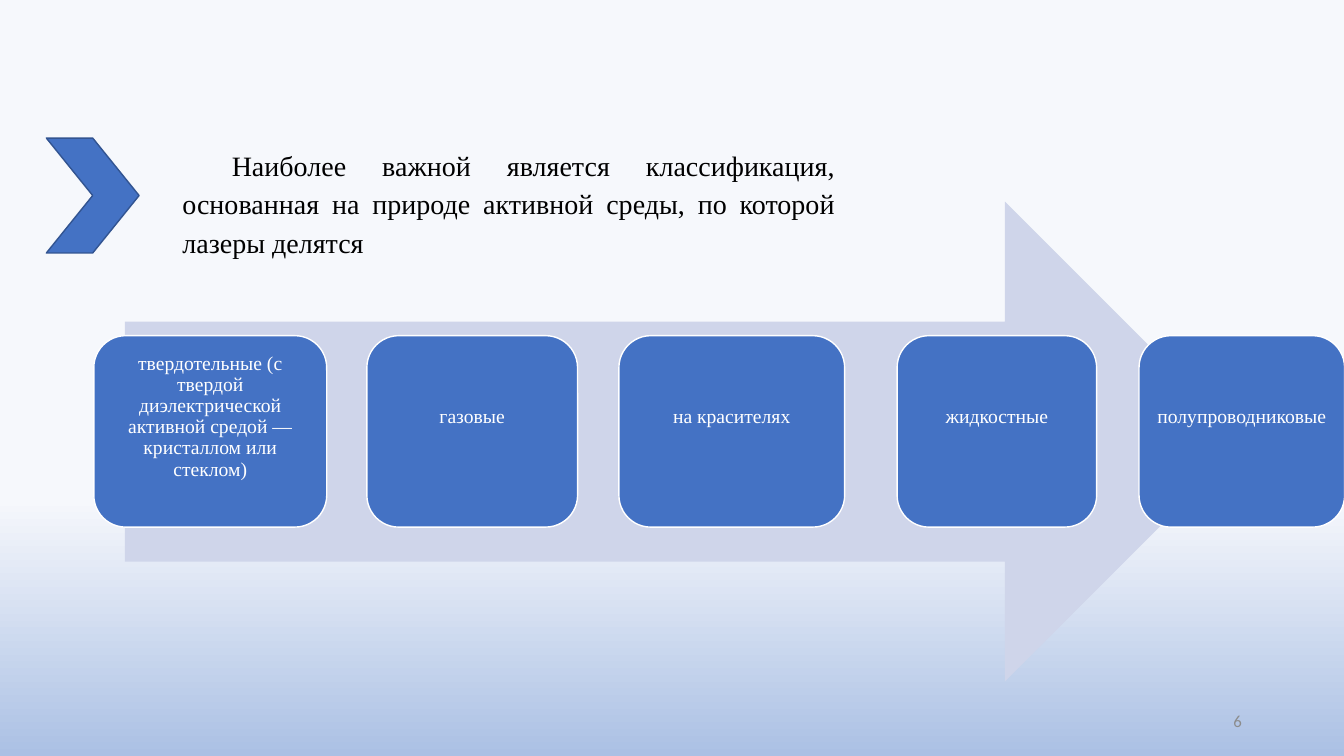
"""Builds a slide that sorts lasers by their active medium along an arrow."""
from pptx import Presentation
from pptx import util as u
from pptx.dml import color
from pptx.enum import shapes, text

WIDTH, HEIGHT = u.Inches(13.333), u.Inches(7.5)
COLORS = {
    "sky": "F6F8FC", "horizon": "ABC0E4", "arrow": "CFD5EA", "blue": "4472C4",
    "edge": "325491", "white": "FFFFFF", "black": "000000", "grey": "8C8C8C",
}
SERIF, SANS = "Times New Roman", "Calibri"
ROW_TOP, ROW_HEIGHT = 44.4, 25.33
LASERS = [
    ("твердотельные (с твердой диэлектрической активной средой — кристаллом или стеклом)", 6.98, 17.33),
    ("газовые", 27.3, 15.68),
    ("на красителях", 46.05, 16.8),
    ("жидкостные", 66.75, 14.85),
    ("полупроводниковые", 84.75, 15.3),
]
INTRO = ("Наиболее важной является классификация, основанная на природе "
         "активной среды, по которой лазеры делятся")


def rgb(name):
    return color.RGBColor.from_string(COLORS[name])


def place(left, top, width, height):
    """Turn percentages of the slide into lengths."""
    return (int(WIDTH * left / 100), int(HEIGHT * top / 100),
            int(WIDTH * width / 100), int(HEIGHT * height / 100))


def paint_background(page):
    fill = page.background.fill
    fill.gradient()
    fill.gradient_angle = 270
    for stop, (name, position) in zip(fill.gradient_stops, [("sky", 0.66), ("horizon", 1)]):
        stop.color.rgb = rgb(name)
        stop.position = position


def add_shape(page, kind, area, fill, line=None):
    shape = page.shapes.add_shape(kind, *place(*area))
    shape.shadow.inherit = False
    shape.fill.solid()
    shape.fill.fore_color.rgb = rgb(fill)
    if line:
        shape.line.color.rgb = rgb(line)
        shape.line.width = u.Pt(1)
    else:
        shape.line.fill.background()
    return shape


def write(shape, words, size, font, ink, align, anchor=text.MSO_ANCHOR.MIDDLE):
    """Fill a shape with one paragraph and return that paragraph."""
    frame = shape.text_frame
    frame.word_wrap = True
    frame.vertical_anchor = anchor
    para = frame.paragraphs[0]
    para.alignment = align
    span = para.add_run()
    span.text = words
    span.font.size = u.Pt(size)
    span.font.name = font
    span.font.color.rgb = rgb(ink)
    return para


def add_laser(page, words, left, width):
    box = add_shape(page, shapes.MSO_SHAPE.ROUNDED_RECTANGLE,
                    (left, ROW_TOP, width, ROW_HEIGHT), "blue", "white")
    frame = box.text_frame
    frame.margin_left = frame.margin_right = frame.margin_top = u.Inches(0.06)
    frame.margin_bottom = u.Inches(0.35)
    para = write(box, words, 14, SERIF, "white", text.PP_ALIGN.CENTER)
    para.line_spacing = 0.9


def add_intro(page):
    box = page.shapes.add_textbox(*place(12.83, 18.27, 50.03, 16.4))
    para = write(box, INTRO, 20, SERIF, "black", text.PP_ALIGN.JUSTIFY, text.MSO_ANCHOR.TOP)
    para.line_spacing = 1.15
    para.space_after = u.Pt(10)
    para._p.get_or_add_pPr().set("indent", str(u.Inches(0.49)))


def add_page_number(page):
    box = page.shapes.add_textbox(*place(70.65, 92.67, 22.5, 5.33))
    write(box, "6", 12, SANS, "grey", text.PP_ALIGN.RIGHT)


def main():
    deck = Presentation()
    deck.slide_width, deck.slide_height = WIDTH, HEIGHT
    page = deck.slides.add_slide(deck.slide_layouts[6])
    paint_background(page)
    add_shape(page, shapes.MSO_SHAPE.RIGHT_ARROW, (9.3, 26.67, 83.33, 63.47), "arrow")
    for words, left, width in LASERS:
        add_laser(page, words, left, width)
    add_page_number(page)
    add_shape(page, shapes.MSO_SHAPE.CHEVRON, (3.45, 18.27, 6.9, 15.2), "blue", "edge")
    add_intro(page)
    deck.save("out.pptx")


if __name__ == "__main__":
    main()
